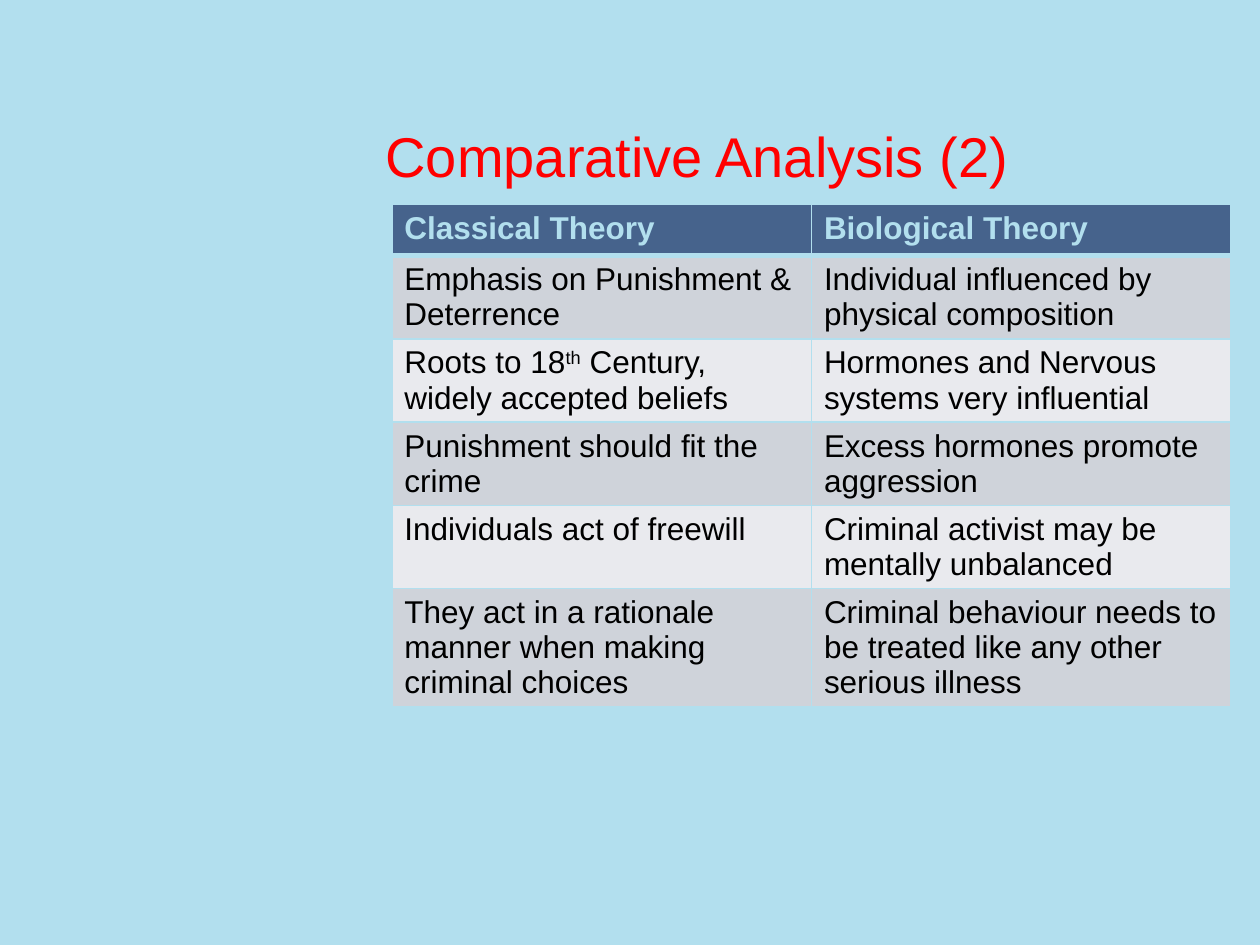
from lxml.etree import SubElement
from pptx import Presentation
from pptx.dml.color import RGBColor
from pptx.enum.text import MSO_ANCHOR, MSO_AUTO_SIZE, PP_ALIGN
from pptx.oxml.ns import qn
from pptx.util import Inches, Pt

COLORS = {
    "background": "B2DFEE",
    "title": "FF0000",
    "header": "46638C",
    "odd_row": "CFD3DA",
    "even_row": "E9EAEE",
    "text": "000000",
}
ROWS = [
    ("Classical Theory", "Biological Theory"),
    ("Emphasis on Punishment & Deterrence", "Individual influenced by physical composition"),
    ("Roots to 18^th^ Century, widely accepted beliefs",
     "Hormones and Nervous systems very influential"),
    ("Punishment should fit the crime", "Excess hormones promote aggression"),
    ("Individuals act of freewill", "Criminal activist may be mentally unbalanced"),
    ("They act in a rationale manner when making criminal choices",
     "Criminal behaviour needs to be treated like any other serious illness"),
]


def add_text(paragraph, text, color, **font_format):
    """Add runs to the paragraph; text between ^ marks is superscript."""
    for index, part in enumerate(text.split("^")):
        run = paragraph.add_run()
        run.text = part
        run.font.name = "Arial"
        run.font.color.rgb = RGBColor.from_string(COLORS[color])
        for name, value in font_format.items():
            setattr(run.font, name, value)
        if index % 2:
            run._r.get_or_add_rPr().set("baseline", "30000")


def add_border(cell, side, width):
    line = SubElement(cell._tc.get_or_add_tcPr(), qn(f"a:ln{side}"), w=str(Pt(width)))
    fill = SubElement(line, qn("a:solidFill"))
    SubElement(fill, qn("a:srgbClr"), val=COLORS["background"])


presentation = Presentation()
presentation.slide_width = Inches(10)
presentation.slide_height = Inches(7.5)
slide = presentation.slides.add_slide(presentation.slide_layouts[5])
slide.background.fill.solid()
slide.background.fill.fore_color.rgb = RGBColor.from_string(COLORS["background"])

title = slide.shapes.title
title.left, title.top = Inches(2.96), Inches(0.3)
title.width, title.height = Inches(6.91), Inches(1.25)
title_format = {
    "vertical_anchor": MSO_ANCHOR.BOTTOM,
    "auto_size": MSO_AUTO_SIZE.NONE,
    "word_wrap": True,
}
for name, value in title_format.items():
    setattr(title.text_frame, name, value)
title_paragraph = title.text_frame.paragraphs[0]
title_paragraph.alignment = PP_ALIGN.LEFT
add_text(title_paragraph, "Comparative Analysis (2)", "title", size=Pt(32))

# Rows start at one line high and grow with their text.
row_height = Inches(0.41)
table = slide.shapes.add_table(
    len(ROWS), 2, Inches(3.11), Inches(1.62), Inches(6.66), row_height * len(ROWS)
).table
for row_index, texts in enumerate(ROWS):
    is_header = row_index == 0
    table.rows[row_index].height = row_height
    if is_header:
        fill_color, text_color = "header", "background"
    else:
        fill_color, text_color = "odd_row" if row_index % 2 else "even_row", "text"
    for column_index, text in enumerate(texts):
        cell = table.cell(row_index, column_index)
        border_widths = {
            "L": 1,
            "R": 1,
            "T": 3 if row_index == 1 else 1,
            "B": 3 if is_header else 1,
        }
        for side, width in border_widths.items():
            add_border(cell, side, width)
        cell.fill.solid()
        cell.fill.fore_color.rgb = RGBColor.from_string(COLORS[fill_color])
        add_text(cell.text_frame.paragraphs[0], text, text_color, size=Pt(18), bold=is_header)

presentation.save("out.pptx")
